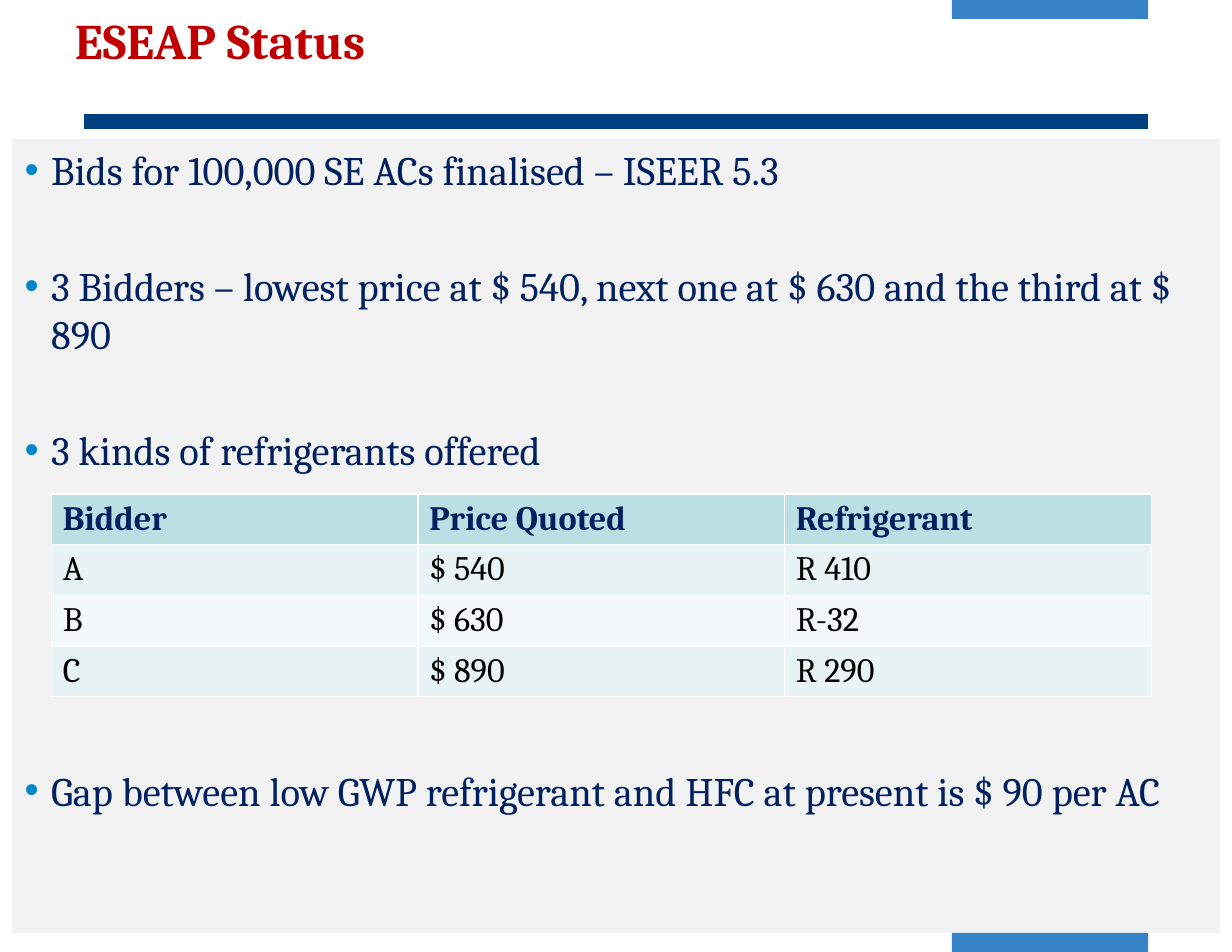
from lxml.etree import SubElement
from pptx import Presentation
from pptx.dml.color import RGBColor
from pptx.enum.shapes import MSO_CONNECTOR, MSO_SHAPE
from pptx.enum.text import MSO_ANCHOR, MSO_AUTO_SIZE, PP_ALIGN
from pptx.oxml.ns import qn
from pptx.util import Cm, Pt

TITLE = "ESEAP Status"
# Text and space before, in points
POINTS = [
    ("Bids for 100,000 SE ACs finalised – ISEER 5.3", 0),
    ("3 Bidders – lowest price at $ 540, next one at $ 630 and the third at $ 890", 43),
    ("3 kinds of refrigerants offered", 43),
    ("Gap between low GWP refrigerant and HFC at present is $ 90 per AC", 188),
]
BIDS = [
    ("Bidder", "Price Quoted", "Refrigerant"),
    ("A", "$ 540", "R 410"),
    ("B", "$ 630", "R-32"),
    ("C", "$ 890", "R 290"),
]

FONT = "Cambria"
RED = RGBColor(0xC0, 0x00, 0x00)
NAVY = RGBColor(0x00, 0x20, 0x60)
BLACK = RGBColor(0x00, 0x00, 0x00)
RULE = RGBColor(0x00, 0x40, 0x80)
BAR = RGBColor(0x38, 0x82, 0xC9)
GREY = RGBColor(0xF2, 0xF2, 0xF2)
HEAD = RGBColor(0xBB, 0xE0, 0xE3)
BANDS = [RGBColor(0xE7, 0xF3, 0xF4), RGBColor(0xF3, 0xF9, 0xFA)]
DOT = "0087CB"

WIDE, HIGH = Cm(27.94), Cm(21.59)
LEFT, RIGHT = Cm(1.91), Cm(26.04)
BAR_W, BAR_H = Cm(4.45), Cm(0.43)


def place(shape, left, top, width, height):
    shape.left, shape.top = Cm(left), Cm(top)
    shape.width, shape.height = Cm(width), Cm(height)


def set_up(frame, side, edge):
    """Set the margins and pin the text to the top at its own size."""
    frame.margin_left = frame.margin_right = Cm(side)
    frame.margin_top = frame.margin_bottom = Cm(edge)
    frame.vertical_anchor = MSO_ANCHOR.TOP
    frame.auto_size = MSO_AUTO_SIZE.NONE
    frame.word_wrap = True


def write(para, text, size, color, bold=False):
    run = para.add_run()
    run.text = text
    font = run.font
    font.name, font.size, font.bold = FONT, Pt(size), bold
    font.color.rgb = color


def add_dot(para):
    props = para._p.get_or_add_pPr()
    props.set("marL", str(Cm(0.6)))
    props.set("indent", str(-Cm(0.6)))
    tint = SubElement(props, qn("a:buClr"))
    SubElement(tint, qn("a:srgbClr"), val=DOT)
    SubElement(props, qn("a:buFont"), typeface="Arial")
    SubElement(props, qn("a:buChar"), char="•")


def add_frame(slide):
    """Draw the two bars at the slide's edges and the rule under the title."""
    for top in (0, HIGH - BAR_H):
        bar = slide.shapes.add_shape(
            MSO_SHAPE.RECTANGLE, RIGHT - BAR_W, top, BAR_W, BAR_H)
        bar.shadow.inherit = False
        bar.fill.solid()
        bar.fill.fore_color.rgb = BAR
        bar.line.fill.background()
    rule = slide.shapes.add_connector(
        MSO_CONNECTOR.STRAIGHT, LEFT, Cm(2.75), RIGHT, Cm(2.75))
    rule.line.color.rgb = RULE
    rule.line.width = Pt(9.75)
    SubElement(rule._element.spPr, qn("a:effectLst"))


def add_title(slide):
    title = slide.shapes.title
    place(title, 1.5, 0.38, 24.94, 1.63)
    set_up(title.text_frame, 0.2, 0.1)
    para = title.text_frame.paragraphs[0]
    para.alignment = PP_ALIGN.LEFT
    para.line_spacing = 0.8
    write(para, TITLE, 32, RED, True)


def add_points(slide):
    body = slide.placeholders[1]
    place(body, 0.28, 3.15, 27.38, 18.01)
    body.fill.solid()
    body.fill.fore_color.rgb = GREY
    frame = body.text_frame
    set_up(frame, 0.28, 0.15)
    for i, (text, gap) in enumerate(POINTS):
        para = frame.add_paragraph() if i else frame.paragraphs[0]
        para.alignment = PP_ALIGN.LEFT if i else PP_ALIGN.JUSTIFY
        para.space_before = Pt(gap)
        add_dot(para)
        write(para, text, 26, NAVY)


def add_bids(slide):
    rows, cols = len(BIDS), len(BIDS[0])
    table = slide.shapes.add_table(
        rows, cols, Cm(1.17), Cm(11.2), Cm(24.94), Cm(1.15 * rows)).table
    for i, row in enumerate(BIDS):
        for j, text in enumerate(row):
            cell = table.cell(i, j)
            cell.fill.solid()
            cell.fill.fore_color.rgb = BANDS[(i - 1) % 2] if i else HEAD
            write(cell.text_frame.paragraphs[0], text, 22,
                  BLACK if i else NAVY, i == 0)


def main():
    deck = Presentation()
    deck.slide_width, deck.slide_height = WIDE, HIGH
    slide = deck.slides.add_slide(deck.slide_layouts[1])
    add_frame(slide)
    add_title(slide)
    add_points(slide)
    add_bids(slide)
    deck.save("out.pptx")


if __name__ == "__main__":
    main()
